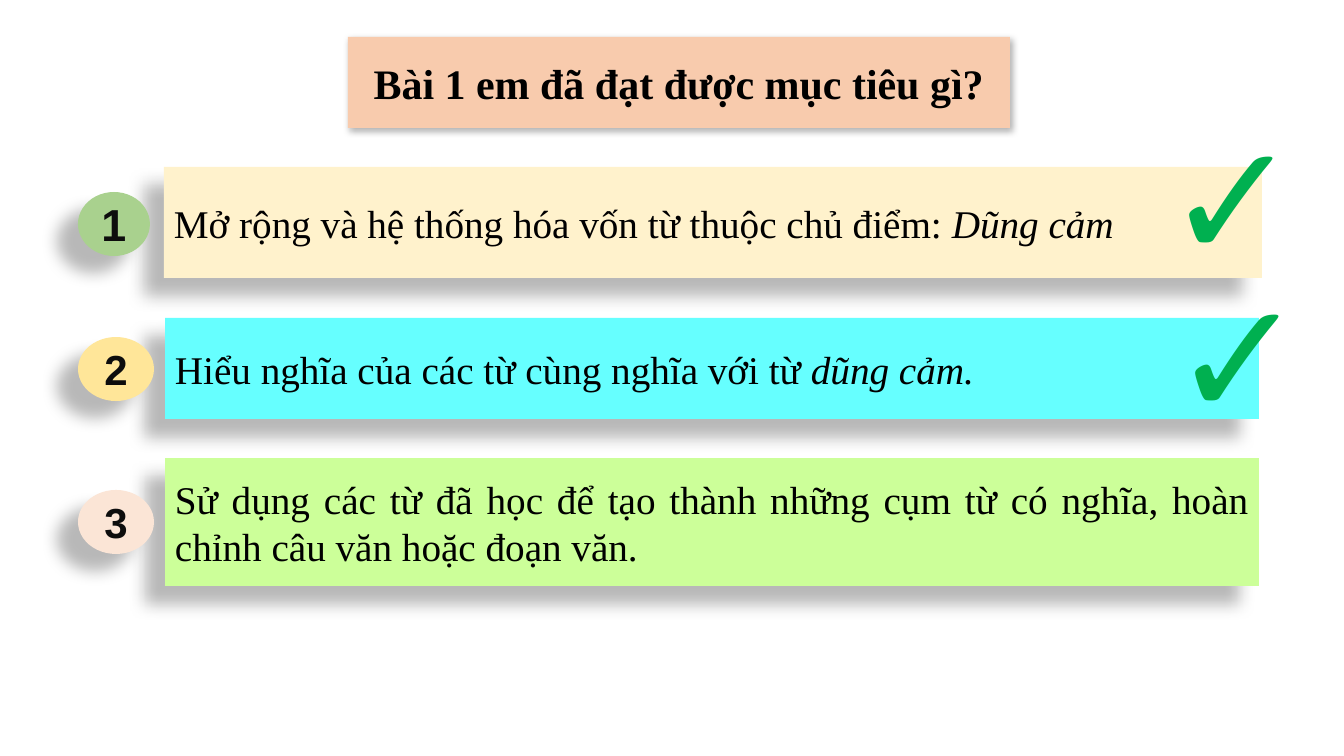
"""Build the slide that reviews the goals reached in lesson 1."""
from dataclasses import dataclass

import lxml.etree
import pptx
import pptx.dml.color
import pptx.enum.shapes
import pptx.enum.text
import pptx.oxml
import pptx.oxml.ns
import pptx.shapes.autoshape
import pptx.slide
import pptx.text.text
import pptx.util

RGB = pptx.dml.color.RGBColor
KIND = pptx.enum.shapes.MSO_SHAPE
ALIGN = pptx.enum.text.PP_ALIGN
SIZING = pptx.enum.text.MSO_AUTO_SIZE
MIDDLE = pptx.enum.text.MSO_ANCHOR.MIDDLE

SCALE = 914400 / 100.8
BLACK = RGB(0x00, 0x00, 0x00)
INK = RGB(0x0D, 0x0D, 0x0D)
GREEN = RGB(0x00, 0xB0, 0x50)
PEACH = RGB(0xF8, 0xCB, 0xAD)
CREAM = RGB(0xFF, 0xF2, 0xCC)
CYAN = RGB(0x66, 0xFF, 0xFF)
LIME = RGB(0xCC, 0xFF, 0x99)
LEAF = RGB(0xA9, 0xD1, 0x8E)
GOLD = RGB(0xFF, 0xE6, 0x99)
BLUSH = RGB(0xFB, 0xE5, 0xD6)
SERIF = "Times New Roman"


@dataclass(frozen=True)
class Box:
    left: int
    top: int
    width: int
    height: int

    def emu(self) -> tuple[int, int, int, int]:
        """Give the four lengths in EMU."""
        return px(self.left), px(self.top), px(self.width), px(self.height)


@dataclass(frozen=True)
class Shade:
    alpha: int
    blur: float
    far: float
    angle: int


@dataclass(frozen=True)
class Goal:
    bar: Box
    fill: RGB
    text: str
    stress: str
    disc: Box
    tint: RGB
    size: int


DEEP = Shade(28, 11.8, 19.7, 141)
SOFT = Shade(30, 4.5, 2.6, 53)
HEAD = Box(348, 37, 662, 91)
GOALS = [
    Goal(Box(164, 167, 1098, 111), CREAM,
         "Mở rộng và hệ thống hóa vốn từ thuộc chủ điểm: ", "Dũng cảm",
         Box(78, 192, 72, 64), LEAF, 32),
    Goal(Box(165, 318, 1094, 101), CYAN,
         "Hiểu nghĩa của các từ cùng nghĩa với từ ", "dũng cảm.",
         Box(78, 337, 76, 64), GOLD, 30),
    Goal(Box(165, 458, 1094, 128), LIME,
         "Sử dụng các từ đã học để tạo thành những cụm từ có nghĩa, "
         "hoàn chỉnh câu văn hoặc đoạn văn.", "",
         Box(78, 490, 76, 64), BLUSH, 30),
]
TICKS = [Box(1156, 93, 113, 206), Box(1162, 251, 113, 206)]


def px(count: int) -> int:
    """Turn px into EMU."""
    return round(count * SCALE)


def cast(shape: pptx.shapes.autoshape.Shape, shade: Shade) -> None:
    """Give the shape an outer shadow."""
    shape.shadow.inherit = False
    glow = shape._element.spPr.find(pptx.oxml.ns.qn("a:effectLst"))
    glow.append(pptx.oxml.parse_xml(
        f'<a:outerShdw {pptx.oxml.ns.nsdecls("a")} blurRad="{pptx.util.Pt(shade.blur)}" '
        f'dist="{pptx.util.Pt(shade.far)}" dir="{shade.angle * 60000}" algn="ctr" '
        f'rotWithShape="0"><a:srgbClr val="{BLACK}"><a:alpha val="{shade.alpha * 1000}"/>'
        '</a:srgbClr></a:outerShdw>'))


def style(para: pptx.text.text._Paragraph, name: str, size: int, ink: RGB,
          bold: bool = False, align: ALIGN = ALIGN.LEFT) -> None:
    """Set the font and alignment of a paragraph."""
    para.alignment = align
    para.font.name = name
    para.font.size = pptx.util.Pt(size)
    para.font.bold = bold
    para.font.color.rgb = ink


def paint(shape: pptx.shapes.autoshape.Shape, fill: RGB, shade: Shade) -> None:
    """Set the fill, shadow and text frame of a shape."""
    shape.fill.solid()
    shape.fill.fore_color.rgb = fill
    shape.line.fill.background()
    cast(shape, shade)
    frame = shape.text_frame
    frame.word_wrap = True
    frame.auto_size = SIZING.NONE
    frame.vertical_anchor = MIDDLE


def draw_head(slide: pptx.slide.Slide) -> None:
    """Draw the rounded title."""
    title = slide.shapes.title
    title.left, title.top, title.width, title.height = HEAD.emu()
    shape = title._element.spPr
    shape.insert(1, pptx.oxml.parse_xml(
        f'<a:prstGeom {pptx.oxml.ns.nsdecls("a")} prst="roundRect"><a:avLst/></a:prstGeom>'))
    paint(title, PEACH, SOFT)
    title.text_frame.text = "Bài 1 em đã đạt được mục tiêu gì?"
    style(title.text_frame.paragraphs[0], SERIF, 30, BLACK, True, ALIGN.CENTER)


def draw_goal(slide: pptx.slide.Slide, rank: int, goal: Goal) -> None:
    """Draw a goal bar and its numbered disc as a group."""
    group = slide.shapes.add_group_shape()
    bar = group.shapes.add_shape(KIND.RECTANGLE, *goal.bar.emu())
    paint(bar, goal.fill, DEEP)
    para = bar.text_frame.paragraphs[0]
    para.add_run().text = goal.text
    if goal.stress:
        run = para.add_run()
        run.text = goal.stress
        run.font.italic = True
    style(para, SERIF, 28, BLACK, align=ALIGN.JUSTIFY)
    disc = group.shapes.add_shape(KIND.OVAL, *goal.disc.emu())
    paint(disc, goal.tint, DEEP)
    disc.text_frame.text = str(rank)
    style(disc.text_frame.paragraphs[0], "Arial", goal.size, INK, True, ALIGN.CENTER)


def draw_tick(slide: pptx.slide.Slide, box: Box) -> None:
    """Draw a large check mark."""
    frame = slide.shapes.add_textbox(*box.emu()).text_frame
    frame.word_wrap = True
    frame.auto_size = SIZING.SHAPE_TO_FIT_TEXT
    frame.text = "✓"
    style(frame.paragraphs[0], "Calibri", 115, GREEN)


def main() -> None:
    """Build and save the deck."""
    deck = pptx.Presentation()
    deck.slide_width, deck.slide_height = px(1344), px(756)
    slide = deck.slides.add_slide(deck.slide_layouts[5])
    draw_head(slide)
    for rank, goal in enumerate(GOALS, 1):
        draw_goal(slide, rank, goal)
    for box in TICKS:
        draw_tick(slide, box)
    deck.save("out.pptx")


if __name__ == "__main__":
    main()
